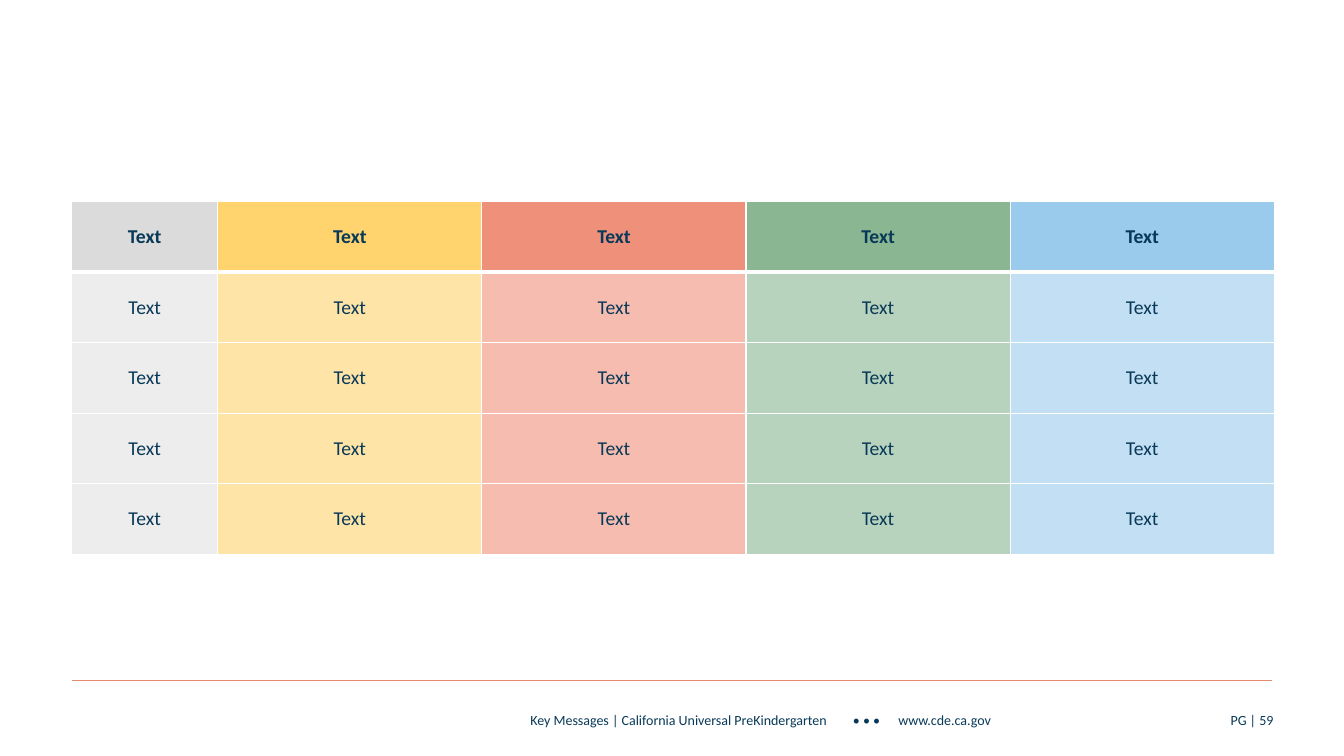
from lxml import etree
from pptx import Presentation
from pptx import util as u
from pptx.dml.color import RGBColor
from pptx.enum import shapes, text
from pptx.oxml import ns

CENTER, RIGHT, LEFT = text.PP_ALIGN.CENTER, text.PP_ALIGN.RIGHT, text.PP_ALIGN.LEFT


def rgb(value):
    return RGBColor.from_string(value)


def child(parent, tag, **attrs):
    return etree.SubElement(parent, ns.qn(tag), {k: str(v) for k, v in attrs.items()})


def write(tf, content, size=10, bold=False, color="083958", align=CENTER, font="Calibri", tabs=()):
    tf.word_wrap = True
    p = tf.paragraphs[0]
    p.alignment = align
    if tabs:
        stops = child(p._p.get_or_add_pPr(), "a:tabLst")
        for stop in tabs:
            child(stops, "a:tab", pos=u.Inches(stop), algn="l")
    r = p.add_run()
    r.text = content
    r.font.size, r.font.bold, r.font.name = u.Pt(size), bold, font
    r.font.color.rgb = rgb(color)


class Deck:
    """Slide builder holding the footer and table style."""

    white, rule, table_ink = "FFFFFF", "E68973", "093958"

    def __init__(self):
        self.prs = Presentation()
        self.prs.slide_width, self.prs.slide_height = u.Inches(13.33), u.Inches(7.5)
        self.s = self.prs.slides.add_slide(self.prs.slide_layouts[6])

    def line(self, x1, y1, x2, y2):
        ends = [u.Inches(v) for v in (x1, y1, x2, y2)]
        cx = self.s.shapes.add_connector(shapes.MSO_CONNECTOR.STRAIGHT, *ends)
        cx.line.color.rgb, cx.line.width = rgb(self.rule), u.Pt(1)
        child(cx._element.spPr, "a:effectLst")

    def label(self, content, x, y, w, h, inset=0, **fmt):
        tf = self.s.shapes.add_textbox(*[u.Inches(v) for v in (x, y, w, h)]).text_frame
        tf.margin_left = u.Inches(inset)
        tf.margin_right = tf.margin_top = tf.margin_bottom = 0
        tf.vertical_anchor = text.MSO_ANCHOR.MIDDLE
        write(tf, content, **fmt)

    def borders(self, cell, top=1, bottom=1):
        tc_pr = cell._tc.get_or_add_tcPr()
        for side, width in (("L", 1), ("R", 1), ("T", top), ("B", bottom)):
            ln = child(tc_pr, f"a:ln{side}", w=u.Pt(width))
            child(child(ln, "a:solidFill"), "a:srgbClr", val=self.white)

    def cell(self, cell, content, fill, opacity=100, bold=False, top=1, bottom=1):
        self.borders(cell, top, bottom)
        cell.fill.solid()
        cell.fill.fore_color.rgb = rgb(fill)
        if opacity < 100:
            color = cell._tc.tcPr.find(f"{ns.qn('a:solidFill')}/{ns.qn('a:srgbClr')}")
            child(color, "a:alpha", val=opacity * 1000)
        cell.vertical_anchor = text.MSO_ANCHOR.MIDDLE
        if not bold:
            cell.margin_top = cell.margin_bottom = u.Inches(0.1)
        write(cell.text_frame, content, size=14, bold=bold, color=self.table_ink)

    def table(self, rows, x, y, widths, row_height, header_fills, body_fills):
        size = [u.Inches(v) for v in (x, y, sum(widths), row_height * len(rows))]
        table = self.s.shapes.add_table(len(rows), len(widths), *size).table
        table.horz_banding = False
        for column, width in zip(table.columns, widths):
            column.width = u.Inches(width)
        for i, row in enumerate(rows):
            table.rows[i].height = u.Inches(row_height)
            for j, content in enumerate(row):
                if i == 0:
                    self.cell(table.cell(i, j), content, header_fills[j], bold=True, bottom=3)
                else:
                    fill, opacity = body_fills[j]
                    self.cell(table.cell(i, j), content, fill, opacity, top=3 if i == 1 else 1)


def main():
    deck = Deck()
    deck.line(0.71, 6.75, 12.62, 6.75)
    deck.label("Key Messages | California Universal PreKindergarten\t• • •\twww.cde.ca.gov",
               3.37, 6.94, 8.34, 0.4, inset=1.89, align=LEFT, tabs=(3.2, 3.65))
    deck.label("PG | 59", 11.92, 6.94, 0.71, 0.4, align=RIGHT)
    accents = ["FFD36D", "EF907B", "8AB791", "9ACAEC"]
    deck.table([["Text"] * 5] * 5, 0.71, 2, [1.45] + [2.62] * 4, 0.7,
               ["DBDBDB"] + accents, [("EDEDED", 100)] + [(c, 60) for c in accents])
    deck.prs.save("out.pptx")


if __name__ == "__main__":
    main()
